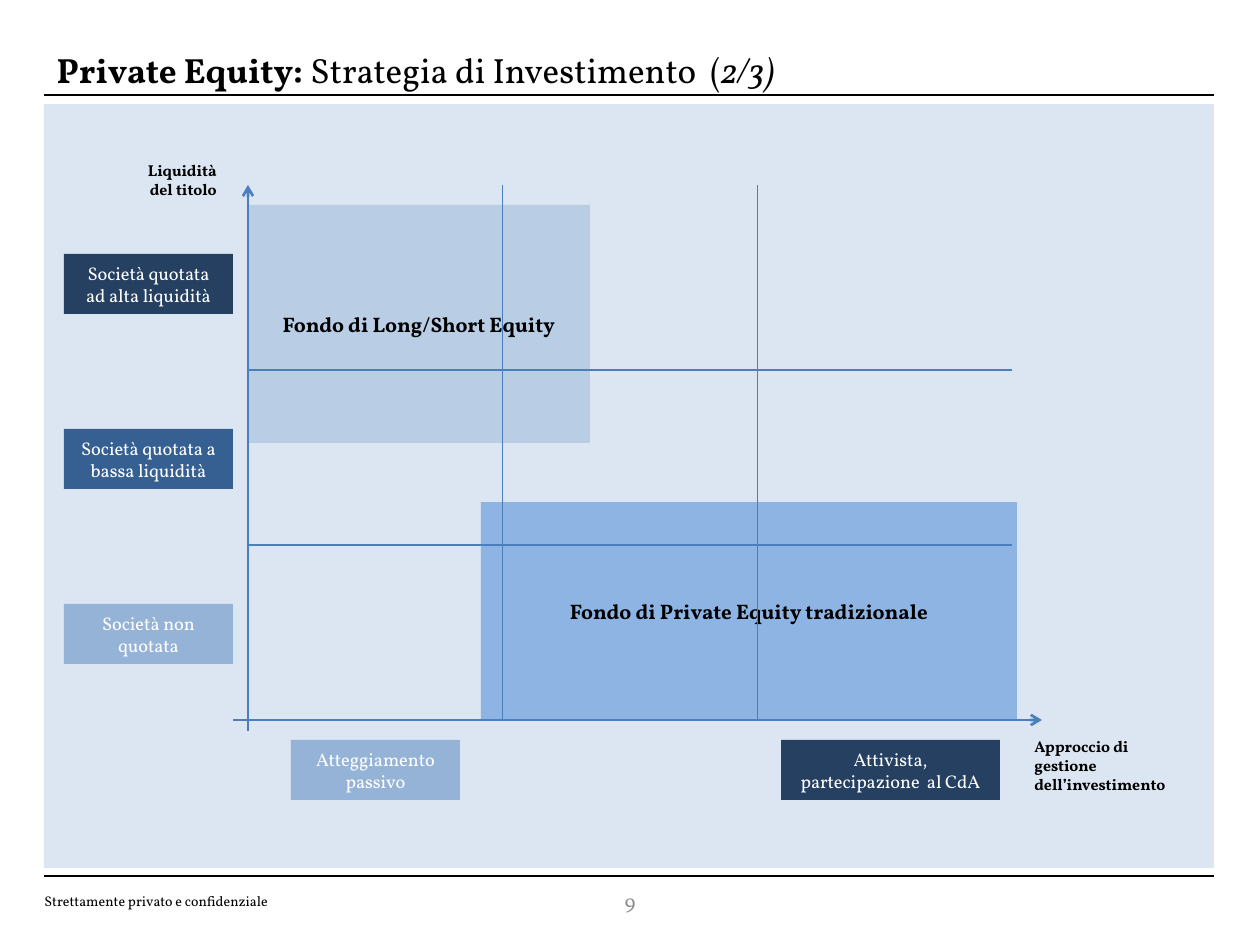
from lxml.etree import SubElement
from pptx import Presentation
from pptx.dml.color import RGBColor
from pptx.enum.shapes import MSO_CONNECTOR, MSO_SHAPE
from pptx.enum.text import MSO_ANCHOR, MSO_AUTO_SIZE, PP_ALIGN
from pptx.oxml.ns import qn
from pptx.util import Pt

PX = 914400 / 126
FONT = "Vollkorn"
BLACK = RGBColor(0x00, 0x00, 0x00)
WHITE = RGBColor(0xFF, 0xFF, 0xFF)
GREY = RGBColor(0x8C, 0x8C, 0x8C)
PANEL = RGBColor(0xDC, 0xE6, 0xF2)
AXIS = RGBColor(0x4B, 0x7E, 0xBC)
NAVY = RGBColor(0x25, 0x40, 0x61)
BLUE = RGBColor(0x37, 0x60, 0x92)
PALE = RGBColor(0x95, 0xB3, 0xD7)
LONG_SHORT = RGBColor(0xB9, 0xCD, 0xE5)
PRIVATE_EQUITY = RGBColor(0x8E, 0xB4, 0xE3)

FUND = {"size": Pt(12), "bold": True}
TAG = {"size": Pt(10.5)}
AXIS_NAME = {"size": Pt(9), "bold": True}
FOOTER = {"size": Pt(8)}
PAGE_NUMBER = {"size": Pt(12)}


def emu(*lengths):
    """Turn px lengths into EMU."""
    return [round(length * PX) for length in lengths]


def format_font(font, color, values):
    """Set the typeface, colour and further values of a font."""
    font.color.rgb = color
    for name, value in {"name": FONT, **values}.items():
        setattr(font, name, value)


def write(frame, text, color, values, align, anchor):
    """Fill a text frame with one formatted paragraph."""
    frame.word_wrap = True
    frame.vertical_anchor = anchor
    paragraph = frame.paragraphs[0]
    paragraph.alignment = align
    run = paragraph.add_run()
    run.text = text
    format_font(run.font, color, values)
    return paragraph


def add_block(slide, box, fill):
    """Add a plain filled rectangle."""
    block = slide.shapes.add_shape(MSO_SHAPE.RECTANGLE, *emu(*box))
    block.shadow.inherit = False
    block.fill.solid()
    block.fill.fore_color.rgb = fill
    block.line.fill.background()
    return block


def add_label(slide, box, text, fill, color, values):
    """Add a filled rectangle with centred text."""
    block = add_block(slide, box, fill)
    return write(block.text_frame, text, color, values, PP_ALIGN.CENTER, MSO_ANCHOR.MIDDLE)


def add_note(slide, box, text, color, values, align=PP_ALIGN.LEFT, anchor=MSO_ANCHOR.TOP):
    """Add a text box."""
    note = slide.shapes.add_textbox(*emu(*box))
    write(note.text_frame, text, color, values, align, anchor)


def add_line(slide, ends, color, width, arrow=False):
    """Add a straight line, with an arrowhead at its end if asked."""
    line = slide.shapes.add_connector(MSO_CONNECTOR.STRAIGHT, *emu(*ends))
    line.line.color.rgb = color
    line.line.width = Pt(width)
    if arrow:
        SubElement(line.line._get_or_add_ln(), qn("a:tailEnd"), type="arrow")
    SubElement(line._element.spPr, qn("a:effectLst"))


def add_title(slide, box):
    """Place the title with its bold, regular and italic parts."""
    title = slide.shapes.title
    title.left, title.top, title.width, title.height = emu(*box)
    frame = title.text_frame
    frame.auto_size = MSO_AUTO_SIZE.NONE
    frame.vertical_anchor = MSO_ANCHOR.MIDDLE
    heading = frame.paragraphs[0]
    heading.alignment = PP_ALIGN.LEFT
    for text, bold, italic in (
        ("Private Equity: ", True, False),
        ("Strategia di Investimento  (", False, False),
        ("2/3)", False, True),
    ):
        run = heading.add_run()
        run.text = text
        format_font(run.font, BLACK, {"size": Pt(20), "bold": bold, "italic": italic})


def add_frame(slide, box):
    """Draw the background panel, its rules and the footer."""
    left, top, width, height = box
    bottom = top + height
    add_block(slide, box, PANEL)
    for y in (top - 9, bottom + 8):
        add_line(slide, (left, y, left + width, y), BLACK, 1)
    add_note(slide, (left - 12, bottom + 18, 517, 29), "Strettamente privato e confidenziale",
             BLACK, FOOTER, anchor=MSO_ANCHOR.MIDDLE)
    add_note(slide, (left + 439, bottom + 8, 294, 50), "9", GREY, PAGE_NUMBER,
             PP_ALIGN.CENTER, MSO_ANCHOR.MIDDLE)


def add_funds(slide, box):
    """Place the two funds in the matrix."""
    left, top, width, height = box
    for fund, text, fill in (
        ((left + 233, top + 317, 536, 218), "Fondo di Private Equity tradizionale", PRIVATE_EQUITY),
        ((left, top + 20, 342, 238), "Fondo di Long/Short Equity", LONG_SHORT),
    ):
        add_label(slide, fund, text, fill, BLACK, FUND).space_after = Pt(18)


def add_grid(slide, box, row):
    """Draw the arrowed axes and the inner lines of the matrix."""
    left, top, width, height = box
    right, bottom = left + width, top + height
    add_line(slide, (left, bottom + 11, left, top), AXIS, 1.5, arrow=True)
    add_line(slide, (left - 15, bottom, right + 30, bottom), AXIS, 1.5, arrow=True)
    for step in (2, 1):
        y = bottom - step * row
        add_line(slide, (left, y, right, y), AXIS, 0.75)
    for step in (1, 2):
        x = left + step * width / 3
        add_line(slide, (x, top, x, bottom), AXIS, 0.75)


def add_axis_labels(slide, box, row):
    """Name both axes and their categories."""
    left, top, width, height = box
    bottom = top + height
    add_note(slide, (left + 774, bottom + 11, 183, 69),
             "Approccio di gestione dell’investimento", BLACK, AXIS_NAME)
    add_note(slide, (left - 138, top - 30, 119, 50), "Liquidità del titolo",
             BLACK, AXIS_NAME, PP_ALIGN.RIGHT)
    for x, tag_width, text, fill in (
        (left + 43, 169, "Atteggiamento passivo", PALE),
        (left + 533, 219, "Attivista, partecipazione  al CdA", NAVY),
    ):
        add_label(slide, (x, bottom + 20, tag_width, 60), text, fill, WHITE, TAG)
    for index, (text, fill) in enumerate((
        ("Società quotata ad alta liquidità", NAVY),
        ("Società quotata a bassa liquidità", BLUE),
        ("Società non quotata", PALE),
    )):
        add_label(slide, (left - 184, top + 69 + index * row, 169, 60), text, fill, WHITE, TAG)


def add_matrix(slide, box):
    """Build the matrix of liquidity against management approach."""
    row = 175
    add_funds(slide, box)
    add_grid(slide, box, row)
    add_axis_labels(slide, box, row)


def main():
    """Build and save the slide."""
    deck = Presentation()
    deck.slide_width, deck.slide_height = emu(1260, 945)
    slide = deck.slides.add_slide(deck.slide_layouts[5])
    add_frame(slide, (44, 104, 1170, 764))
    add_title(slide, (44, 40, 1134, 59))
    add_matrix(slide, (248, 185, 764, 535))
    deck.save("out.pptx")


if __name__ == "__main__":
    main()
